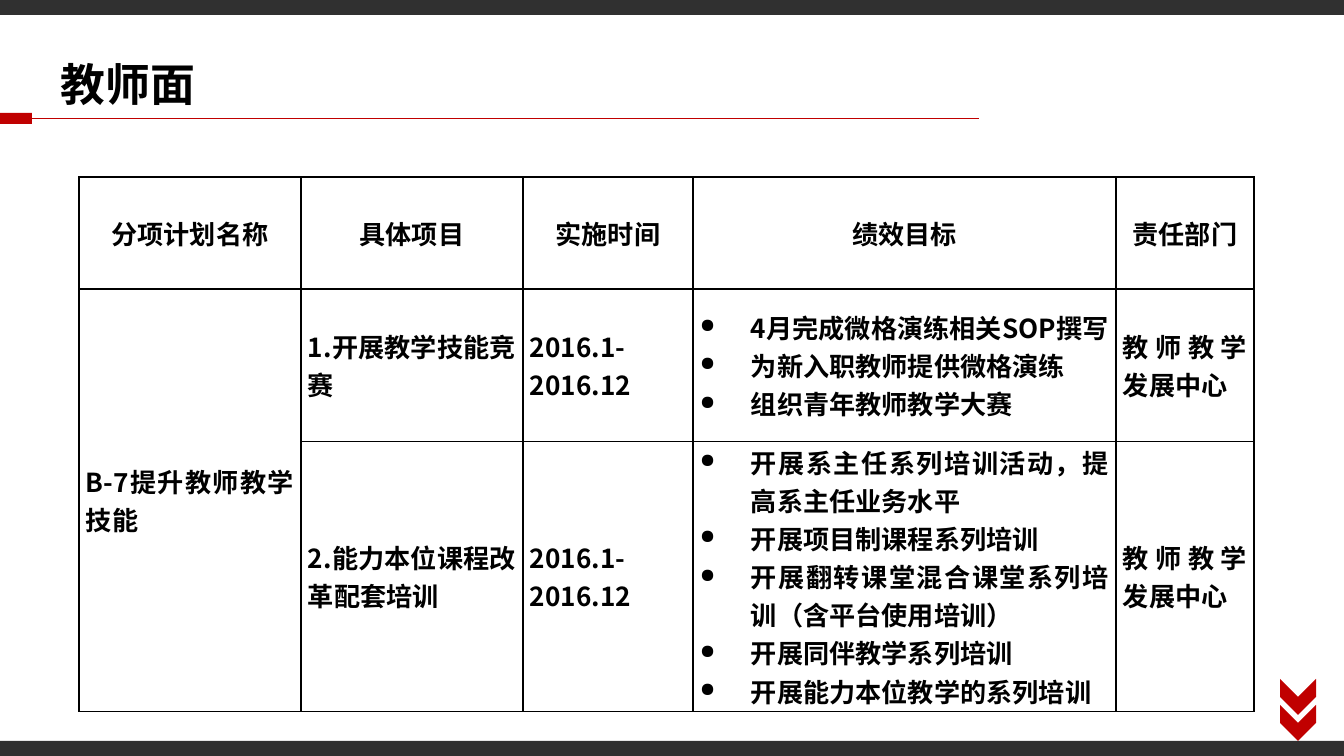
"""Build the slide on teacher development: a plan table under a ruled title."""
import dataclasses

import lxml.etree
import pptx
import pptx.dml.color
import pptx.enum.shapes
import pptx.enum.text
import pptx.oxml
import pptx.oxml.ns
import pptx.util


@dataclasses.dataclass
class Theme:
    font: str = "Noto Sans CJK SC"
    title_size: int = 24
    table_size: int = 14
    black: str = "000000"
    dark: str = "303030"
    red: str = "C00000"


theme = Theme()
qn = pptx.oxml.ns.qn
color = pptx.dml.color.RGBColor.from_string
Align = pptx.enum.text.PP_ALIGN
Anchor = pptx.enum.text.MSO_ANCHOR
Shape = pptx.enum.shapes.MSO_SHAPE


def px(*values):
    lengths = [pptx.util.Emu(round(value * 914400 / 134.4)) for value in values]
    return lengths if len(lengths) > 1 else lengths[0]


def write(frame, lines, size=theme.table_size, align=Align.JUSTIFY, indent=0, bullet=None):
    for index, line in enumerate(lines):
        para = frame.add_paragraph() if index else frame.paragraphs[0]
        para.alignment = align
        span = para.add_run()
        span.text = line
        span.font.name = theme.font
        span.font.size = pptx.util.Pt(size)
        span.font.bold = True
        span.font.color.rgb = color(theme.black)
        east_asian = lxml.etree.Element(qn("a:ea"), typeface=theme.font)
        span.font._element.find(qn("a:latin")).addnext(east_asian)
        if indent:
            properties = para._p.get_or_add_pPr()
            properties.set("marL", str(px(indent)))
            properties.set("indent", str(px(-indent)))
            if bullet:
                lxml.etree.SubElement(properties, qn("a:buSzPct"), val="75000")
                lxml.etree.SubElement(properties, qn("a:buChar"), char=bullet)


deck = pptx.Presentation()
deck.slide_width, deck.slide_height = px(1344, 756)
page = deck.slides.add_slide(deck.slide_layouts[5])

shapes = [
    (Shape.RECTANGLE, (0, 0, 1344, 15), theme.dark, 0),
    (Shape.RECTANGLE, (0, 741, 1344, 15), theme.dark, 0),
    (Shape.CHEVRON, (1280, 679, 36, 36), theme.red, 90),
    (Shape.CHEVRON, (1280, 705, 36, 36), theme.red, 90),
    (Shape.RECTANGLE, (0, 113, 32, 11), theme.red, 0),
]
for kind, place, fill, rotation in shapes:
    box = page.shapes.add_shape(kind, *px(*place))
    box.shadow.inherit = False
    box.rotation = rotation
    box.fill.solid()
    box.fill.fore_color.rgb = color(fill)
    box.line.fill.background()

rule = page.shapes.add_connector(
    pptx.enum.shapes.MSO_CONNECTOR.STRAIGHT, *px(979, 119, 31, 119)
)
rule.line.color.rgb = color(theme.red)
rule.line.width = pptx.util.Pt(0.5)
lxml.etree.SubElement(rule._element.spPr, qn("a:effectLst"))

title = page.shapes.title
title.left, title.top, title.width, title.height = px(47, 50, 163, 67)
title.text_frame.word_wrap = False
title.text_frame.auto_size = pptx.enum.text.MSO_AUTO_SIZE.NONE
title.text_frame.vertical_anchor = Anchor.MIDDLE
write(title.text_frame, ["教师面"], size=theme.title_size, align=Align.LEFT)

columns = [222, 222, 170, 423, 138]
rows = [112, 116, 270]
goal_column = 3
cells = [
    [["分项计划名称"], ["具体项目"], ["实施时间"], ["绩效目标"], ["责任部门"]],
    [
        ["B-7提升教师教学技能"],
        ["1.开展教学技能竞赛"],
        ["2016.1-2016.12"],
        ["4月完成微格演练相关SOP撰写", "为新入职教师提供微格演练", "组织青年教师教学大赛"],
        ["教师教学发展中心"],
    ],
    [
        [],
        ["2.能力本位课程改革配套培训"],
        ["2016.1-2016.12"],
        [
            "开展系主任系列培训活动，提高系主任业务水平",
            "开展项目制课程系列培训",
            "开展翻转课堂混合课堂系列培训（含平台使用培训）",
            "开展同伴教学系列培训",
            "开展能力本位教学的系列培训",
        ],
        ["教师教学发展中心"],
    ],
]
table = page.shapes.add_table(
    len(rows), len(columns), *px(79, 177, sum(columns), sum(rows))
).table
for column, width in zip(table.columns, columns):
    column.width = px(width)
for row, height in zip(table.rows, rows):
    row.height = px(height)
table.cell(1, 0).merge(table.cell(2, 0))

for row_index, row in enumerate(cells):
    for column_index, lines in enumerate(row):
        cell = table.cell(row_index, column_index)
        cell.vertical_anchor = Anchor.MIDDLE
        cell.margin_left = cell.margin_right = px(7)
        cell.margin_top = cell.margin_bottom = 0
        for side in ("a:lnL", "a:lnR", "a:lnT", "a:lnB"):
            edge = lxml.etree.SubElement(
                cell._tc.get_or_add_tcPr(), qn(side), w=str(pptx.util.Pt(1))
            )
            paint = lxml.etree.SubElement(edge, qn("a:solidFill"))
            lxml.etree.SubElement(paint, qn("a:srgbClr"), val=theme.black)
        cell.fill.background()
        write(
            cell.text_frame,
            lines,
            align=Align.JUSTIFY if row_index else Align.CENTER,
            indent=51 if column_index == goal_column else 0,
            bullet="●" if row_index else None,
        )

deck.save("out.pptx")
